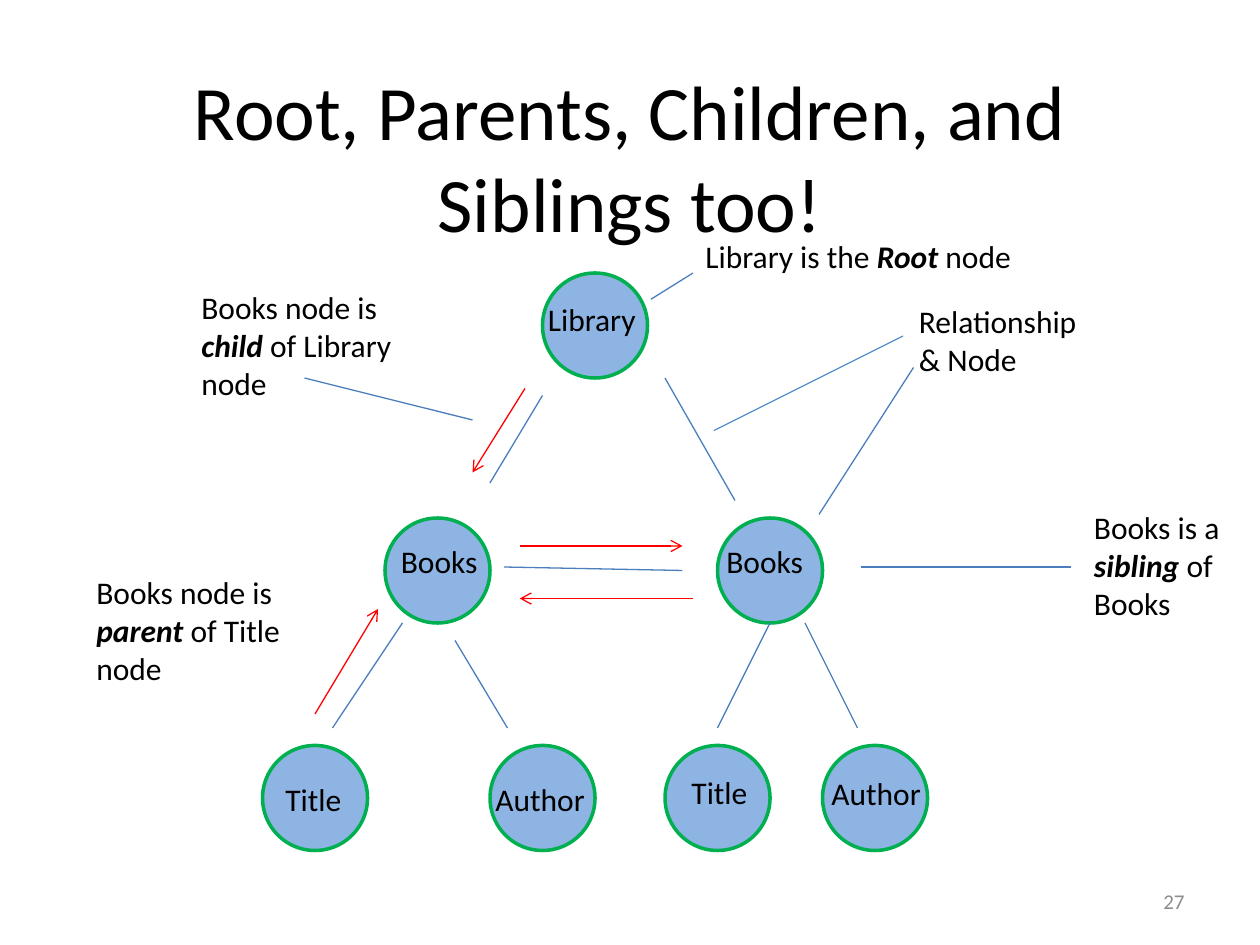
import pptx
import pptx.util
import pptx.dml.color
import pptx.enum.shapes
import pptx.enum.text
import pptx.oxml.ns
import lxml.etree
from dataclasses import dataclass

RGB = pptx.dml.color.RGBColor
BLACK = RGB(0x00, 0x00, 0x00)
GRAY = RGB(0x8C, 0x8C, 0x8C)
SKY = RGB(0x8E, 0xB4, 0xE3)
GREEN = RGB(0x00, 0xB0, 0x50)
BLUE = RGB(0x4B, 0x7E, 0xBC)
PALE = RGB(0x55, 0x8E, 0xD5)
RED = RGB(0xFF, 0x00, 0x00)
FONT = "Calibri"
ALIGN = pptx.enum.text.PP_ALIGN
ANCHOR = pptx.enum.text.MSO_ANCHOR

# The slide is a grid of 360 columns by 270 rows
WIDE, HIGH = pptx.util.Inches(10), pptx.util.Inches(7.5)
COLS, ROWS = 360, 270
SIZE = 30  # node diameter


@dataclass
class Node:
    col: float
    row: float


@dataclass
class Label:
    col: float
    row: float
    wide: float
    high: float
    runs: list[str]  # every second run is stressed


@dataclass
class Link:
    start: tuple[float, float]
    end: tuple[float, float]
    color: RGB = BLUE


TOP, MID, LOW = 78, 148, 213
NODES = [Node(155, TOP), Node(110, MID), Node(205, MID)]
NODES += [Node(col, LOW) for col in (75, 140, 190, 235)]

NAMES = [
    Label(153, 84, 75, 25, ["Library"]),
    Label(204, 153, 75, 25, ["Books"]),
    Label(78, 221, 75, 25, ["Title"]),
    Label(138, 221, 75, 25, ["Author"]),
    Label(194, 219, 34, 14.5, ["Title"]),
    Label(234, 219.5, 39, 14.5, ["Author"]),
    Label(111, 153, 75, 25, ["Books"]),
]

NOTES = [
    Label(259, 84.5, 53, 25.5, ["Relationship & Node"]),
    Label(54, 80.5, 72, 36.5, ["Books node is ", "child ", "of Library node"]),
    Label(24, 162, 72, 36.5, ["Books node is ", "parent ", "of Title node"]),
    Label(198, 66, 96, 14.5, ["Library is the ", "Root ", "node"]),
    Label(309, 143.5, 45, 36.5, ["Books is a ", "sibling ", "of Books"]),
]

EDGES = [
    Link((190, 108), (210, 143)),
    Link((155, 113), (140, 138)),
    Link((115, 178), (95, 208)),
    Link((130, 183), (145, 208)),
    Link((220, 178), (205, 208)),
    Link((230, 178), (245, 208)),
    Link((144, 162), (195, 163)),
]

LEADS = [
    Link((204, 123), (258, 96), PALE),
    Link((135, 120), (87, 108)),
    Link((186, 85.5), (198, 78)),
    Link((246, 162), (306, 162)),
    Link((261, 105), (234, 147)),
]

ARROWS = [
    Link((150, 111), (135, 135), RED),
    Link((90, 204), (108, 174), RED),
    Link((148.5, 156), (195, 156), RED),
    Link((198, 171), (148.5, 171), RED),
]


def across(cols: float) -> int:
    return round(WIDE * cols / COLS)


def down(rows: float) -> int:
    return round(HIGH * rows / ROWS)


def area(col: float, row: float, wide: float, high: float) -> tuple:
    return across(col), down(row), across(wide), down(high)


def write(para, text: str, size: float, color: RGB = BLACK,
          stress: bool = False) -> None:
    run = para.add_run()
    run.text = text
    font = run.font
    font.name, font.size = FONT, pptx.util.Pt(size)
    font.color.rgb = color
    font.bold = font.italic = stress


def draw_node(slide, node: Node) -> None:
    shape = slide.shapes.add_shape(
        pptx.enum.shapes.MSO_SHAPE.OVAL, *area(node.col, node.row, SIZE, SIZE))
    shape.shadow.inherit = False
    shape.fill.solid()
    shape.fill.fore_color.rgb = SKY
    shape.line.color.rgb = GREEN
    shape.line.width = pptx.util.Pt(2)


def draw_label(slide, label: Label) -> None:
    box = slide.shapes.add_textbox(
        *area(label.col, label.row, label.wide, label.high))
    frame = box.text_frame
    frame.word_wrap = True
    frame.auto_size = pptx.enum.text.MSO_AUTO_SIZE.SHAPE_TO_FIT_TEXT
    for i, text in enumerate(label.runs):
        write(frame.paragraphs[0], text, 18, stress=i % 2 == 1)


def draw_link(slide, link: Link, arrow: bool = False) -> None:
    (x1, y1), (x2, y2) = link.start, link.end
    line = slide.shapes.add_connector(
        pptx.enum.shapes.MSO_CONNECTOR.STRAIGHT,
        across(x1), down(y1), across(x2), down(y2))
    line.line.color.rgb = link.color
    line.line.width = pptx.util.Pt(0.75)
    tag = pptx.oxml.ns.qn
    if arrow:
        stroke = line.line._get_or_add_ln()
        lxml.etree.SubElement(stroke, tag("a:tailEnd"), type="arrow")
    lxml.etree.SubElement(line._element.spPr, tag("a:effectLst"))


def main() -> None:
    deck = pptx.Presentation()
    deck.slide_width, deck.slide_height = WIDE, HIGH
    slide = deck.slides.add_slide(deck.slide_layouts[5])

    # Title
    title = slide.shapes.title
    title.left, title.top, title.width, title.height = area(18, 10.8, 324, 67.5)
    title.text_frame.vertical_anchor = ANCHOR.MIDDLE
    para = title.text_frame.paragraphs[0]
    para.alignment = ALIGN.CENTER
    write(para, "Root, Parents, Children, and Siblings too!", 44)

    # Tree
    for node in NODES:
        draw_node(slide, node)
    for name in NAMES:
        draw_label(slide, name)
    for edge in EDGES:
        draw_link(slide, edge)

    # Notes with their leader lines, and arrows of kinship
    for lead in LEADS:
        draw_link(slide, lead)
    for link in ARROWS:
        draw_link(slide, link, arrow=True)
    for note in NOTES:
        draw_label(slide, note)

    # Slide number
    box = slide.shapes.add_textbox(*area(258, 250.25, 84, 14.4))
    frame = box.text_frame
    frame.word_wrap = True
    frame.vertical_anchor = ANCHOR.MIDDLE
    frame.paragraphs[0].alignment = ALIGN.RIGHT
    write(frame.paragraphs[0], "27", 12, GRAY)

    deck.save("out.pptx")


if __name__ == "__main__":
    main()
